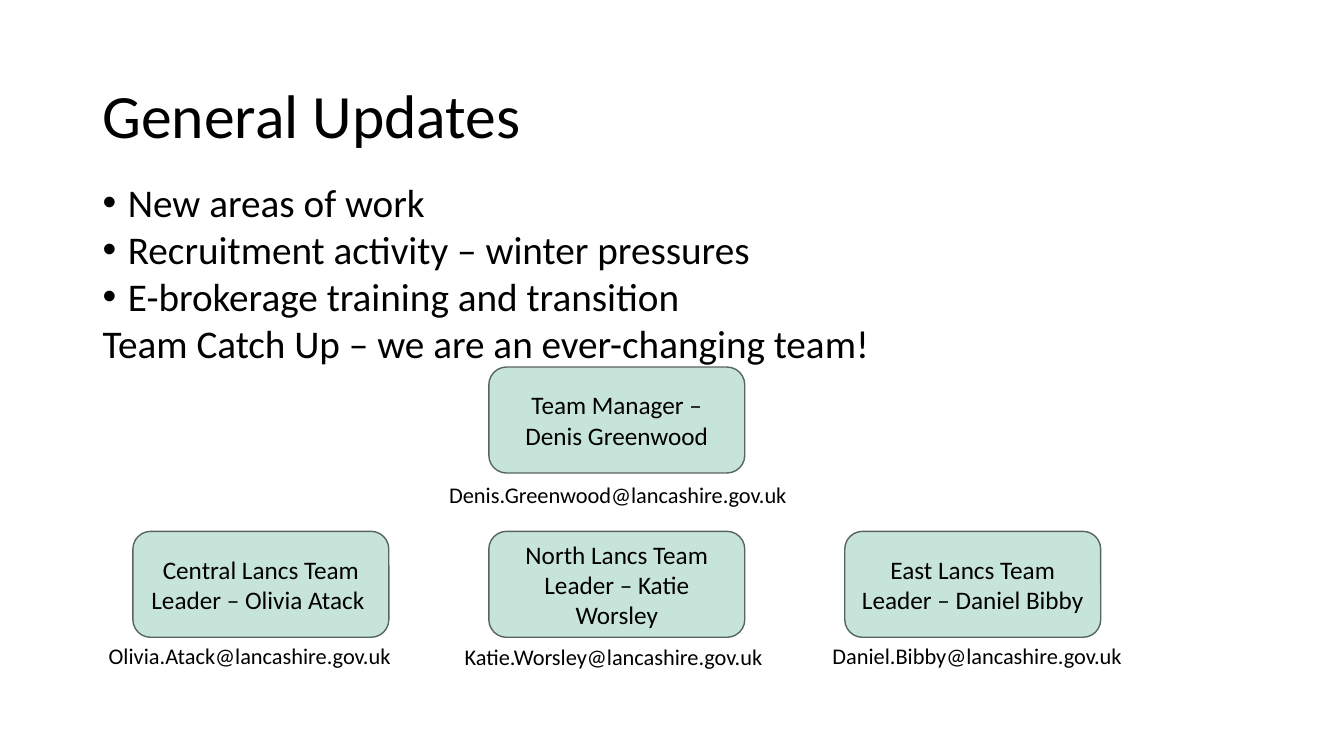
from pptx import Presentation, util as u
from pptx.dml import color
from pptx.enum import shapes, text
from pptx.oxml import ns
from lxml import etree


def paint(hue):
    return color.RGBColor.from_string(hue)


def write(shape, lines, size, **form):
    frame = shape.text_frame
    frame.text = "\n".join(lines)
    look = {"word_wrap": True, "auto_size": text.MSO_AUTO_SIZE.NONE, **form}
    for key, value in look.items():
        setattr(frame, key, value)
    for para in frame.paragraphs:
        for key, value in {"name": "Calibri", "size": u.Pt(size)}.items():
            setattr(para.runs[0].font, key, value)
        para.runs[0].font.color.rgb = paint("000000")
    return frame.paragraphs


deck = Presentation()
deck.slide_width, deck.slide_height = u.Cm(33.87), u.Cm(19.05)
slide = deck.slides.add_slide(deck.slide_layouts[1])
title, body = slide.placeholders

for holder, top, height in ((title, 1.02, 3.68), (body, 4.37, 11.2)):
    place = {"left": 2.33, "top": top, "width": 29.21, "height": height}
    for key, value in place.items():
        setattr(holder, key, u.Cm(value))

middle = text.MSO_ANCHOR.MIDDLE
left = text.PP_ALIGN.LEFT
heading = write(title, ["General Updates"], 44, vertical_anchor=middle)
heading[0].alignment = left

points = [
    "New areas of work",
    "Recruitment activity – winter pressures",
    "E-brokerage training and transition",
    "Team Catch Up – we are an ever-changing team!",
]
items = write(body, points, 28, vertical_anchor=text.MSO_ANCHOR.TOP)
for item in items:
    last = item is items[-1]
    props = item._p.get_or_add_pPr()
    indent = 0 if last else u.Cm(0.64)
    props.set("marL", str(indent))
    props.set("indent", str(-indent))
    if last:
        etree.SubElement(props, ns.qn("a:buNone"))
    else:
        etree.SubElement(props, ns.qn("a:buFont"), typeface="Arial")
        etree.SubElement(props, ns.qn("a:buChar"), char="•")
    for key, value in {"space_before": u.Pt(0), "line_spacing": 1.0, "alignment": left}.items():
        setattr(item, key, value)

# column, box top, role, mail, mail left, mail top, mail width
team = [
    (0, 13.39, "Central Lancs Team Leader – Olivia Atack ",
     "Olivia.Atack@lancashire.gov.uk", 2.49, 16.05, 8.18),
    (1, 13.39, "North Lancs Team Leader – Katie Worsley",
     "Katie.Worsley@lancashire.gov.uk", 11.46, 16.08, 8.18),
    (2, 13.39, "East Lancs Team Leader – Daniel Bibby ",
     "Daniel.Bibby@lancashire.gov.uk", 20.73, 16.05, 8.18),
    (1, 9.25, "Team Manager – Denis Greenwood",
     "Denis.Greenwood@lancashire.gov.uk", 11.07, 11.99, 9.27),
]
for column, top, role, mail, start, below, width in team:
    box = slide.shapes.add_shape(
        shapes.MSO_SHAPE.ROUNDED_RECTANGLE,
        u.Cm(3.35 + 8.97 * column), u.Cm(top), u.Cm(6.45), u.Cm(2.67))
    box.shadow.inherit = False
    box.fill.solid()
    box.fill.fore_color.rgb = paint("C7E4DB")
    box.line.color.rgb = paint("576460")
    box.line.width = u.Pt(1)
    write(box, [role], 18, vertical_anchor=middle)[0].alignment = text.PP_ALIGN.CENTER
    label = slide.shapes.add_textbox(u.Cm(start), u.Cm(below), u.Cm(width), u.Cm(0.94))
    write(label, [mail], 16, auto_size=text.MSO_AUTO_SIZE.SHAPE_TO_FIT_TEXT)

deck.save("out.pptx")
